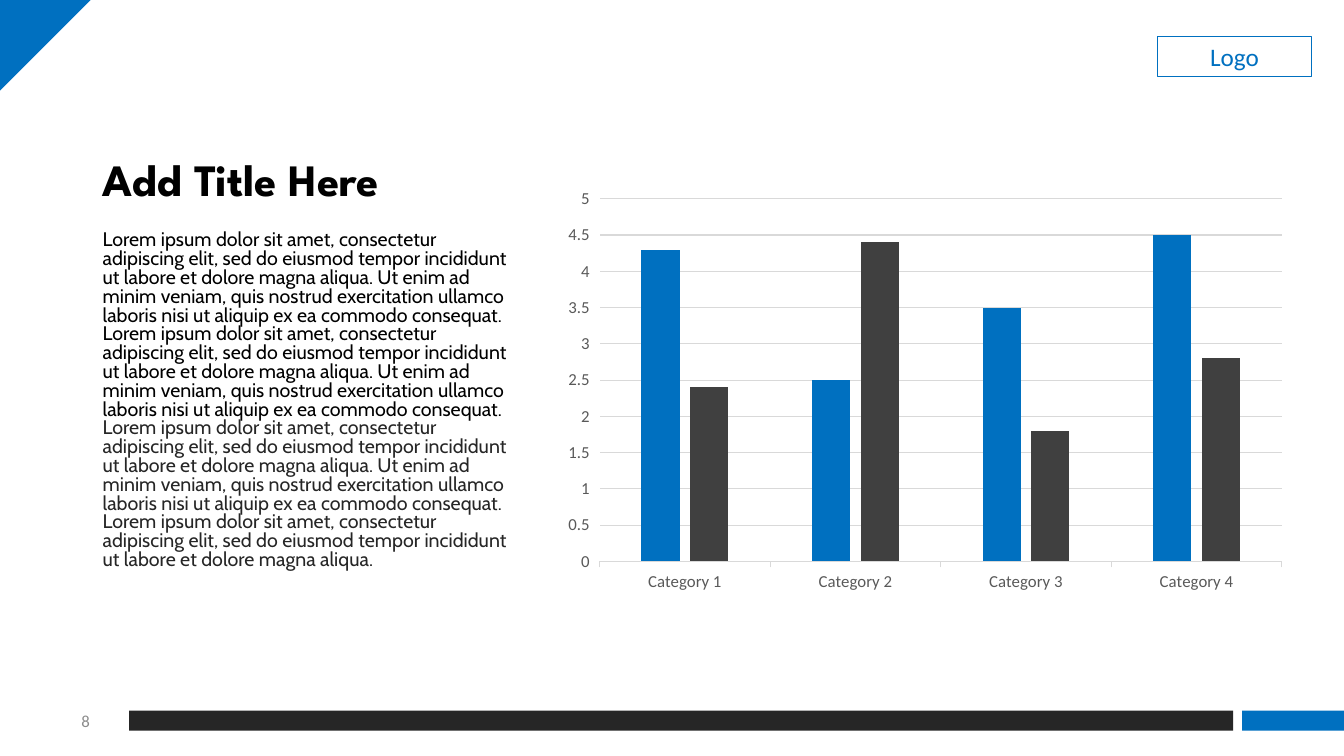
import pptx
import pptx.chart.data
import pptx.dml.color
import pptx.enum.chart
import pptx.enum.shapes
import pptx.enum.text
import pptx.util

Inches = pptx.util.Inches
Pt = pptx.util.Pt
MSO_SHAPE = pptx.enum.shapes.MSO_SHAPE
ALIGN = pptx.enum.text.PP_ALIGN
ANCHOR = pptx.enum.text.MSO_ANCHOR
TICK = pptx.enum.chart.XL_TICK_MARK

BLUE, CHARCOAL, GREY, GRID = "0070C0", "262626", "595959", "D9D9D9"
OPENING = (
    "Lorem ipsum dolor sit amet, consectetur adipiscing elit, "
    "sed do eiusmod tempor incididunt ut labore et dolore magna aliqua."
)
PASSAGE = (
    OPENING + " Ut enim ad minim veniam, quis nostrud exercitation ullamco "
    "laboris nisi ut aliquip ex ea commodo consequat. "
)


def rgb(code):
    """Turn a hex string into a colour."""
    return pptx.dml.color.RGBColor.from_string(code)


def apply(target, values):
    """Set each attribute named in a dict of format values."""
    for name, value in values.items():
        setattr(target, name, value)


def style_font(font, name, size, color, bold=False):
    """Set typeface, size, weight and colour of a font."""
    apply(font, {"name": name, "size": Pt(size), "bold": bold})
    font.color.rgb = rgb(color)


def style_line(line, color):
    """Give a line its colour and the hairline width."""
    line.color.rgb = rgb(color)
    line.width = Pt(0.75)


def add_block(slide, kind, box, fill=None, outline=None):
    """Add a flat preset shape with optional fill and outline."""
    block = slide.shapes.add_shape(kind, *map(Inches, box))
    block.shadow.inherit = False
    if fill:
        block.fill.solid()
        block.fill.fore_color.rgb = rgb(fill)
    else:
        block.fill.background()
    if outline:
        style_line(block.line, outline)
    else:
        block.line.fill.background()
    return block


def write(shape, passages, frame_format, paragraph_format):
    """Fill one paragraph with (text, font values) passages."""
    frame = shape.text_frame
    apply(frame, {"word_wrap": True, **frame_format})
    paragraph = frame.paragraphs[0]
    apply(paragraph, paragraph_format)
    for text, font_values in passages:
        run = paragraph.add_run()
        run.text = text
        style_font(run.font, *font_values)


def add_text(slide, box, passages, frame_format, paragraph_format):
    """Add a wrapping text box with one paragraph."""
    textbox = slide.shapes.add_textbox(*map(Inches, box))
    write(textbox, passages, frame_format, paragraph_format)


def add_frame(slide, width, height):
    """Place the corner, footer bars and page number on the page edges."""
    corner = add_block(slide, MSO_SHAPE.RIGHT_TRIANGLE, (0, 0, 0.9, 0.9), BLUE)
    corner.rotation = 90
    bar_top = height - 0.45
    accent_left = width - 1.01
    add_block(slide, MSO_SHAPE.RECTANGLE,
              (1.28, bar_top, accent_left - 0.09 - 1.28, 0.2), CHARCOAL)
    add_block(slide, MSO_SHAPE.RECTANGLE,
              (accent_left, bar_top, 1.01, 0.2), BLUE)
    add_text(slide, (0.45, bar_top - 0.1, 0.54, 0.4),
             [("8", ("Calibri", 12, "8C8C8C"))],
             {"vertical_anchor": ANCHOR.MIDDLE}, {"alignment": ALIGN.RIGHT})


def add_story(slide, left, top, width):
    """Stack the title above the body text in one column."""
    add_text(slide, (left, top, width, 1.6),
             [("Add Title Here", ("League Spartan", 32, "000000", True))],
             {"vertical_anchor": ANCHOR.BOTTOM}, {"line_spacing": 0.9})
    add_text(slide, (left, top + 1.75, width, 4.17),
             [(PASSAGE * 2, ("Cabin", 14, "000000")),
              (PASSAGE + OPENING, ("Cabin", 14, CHARCOAL))],
             {}, {"line_spacing": 0.8, "space_before": Pt(10)})


def add_category_chart(slide, box):
    """Add the clustered columns for the four categories."""
    scores = pptx.chart.data.CategoryChartData()
    scores.categories = [f"Category {number}" for number in range(1, 5)]
    scores.add_series("Series 1", (4.3, 2.5, 3.5, 4.5))
    scores.add_series("Series 2", (2.4, 4.4, 1.8, 2.8))
    chart = slide.shapes.add_chart(
        pptx.enum.chart.XL_CHART_TYPE.COLUMN_CLUSTERED,
        *map(Inches, box), scores).chart
    apply(chart, {"has_legend": False, "has_title": False})
    style_font(chart.font, "Calibri", 10, "000000")

    columns = chart.plots[0]
    apply(columns, {"gap_width": 219, "overlap": -27,
                    "vary_by_categories": False})
    for series, color in zip(columns.series, (BLUE, "404040")):
        series.format.fill.solid()
        series.format.fill.fore_color.rgb = rgb(color)

    categories, values = chart.category_axis, chart.value_axis
    for axis in (categories, values):
        style_font(axis.tick_labels.font, "Calibri", 12, GREY)
        apply(axis, {"major_tick_mark": TICK.OUTSIDE,
                     "minor_tick_mark": TICK.NONE})
    style_line(categories.format.line, GRID)
    apply(values, {"minimum_scale": 0, "maximum_scale": 5, "major_unit": 0.5,
                   "has_major_gridlines": True})
    values.format.line.fill.background()
    style_line(values.major_gridlines.format.line, GRID)


def add_logo_box(slide, box):
    """Add the outlined box that reserves room for a logo."""
    logo = add_block(slide, MSO_SHAPE.RECTANGLE, box, outline=BLUE)
    write(logo, [("Logo", ("Calibri", 18, BLUE))],
          {"vertical_anchor": ANCHOR.MIDDLE}, {"alignment": ALIGN.CENTER})


def main():
    """Build the slide and save it."""
    width, height = 13.33, 7.5
    deck = pptx.Presentation()
    apply(deck, {"slide_width": Inches(width), "slide_height": Inches(height)})
    slide = deck.slides.add_slide(deck.slide_layouts[6])
    add_frame(slide, width, height)
    add_story(slide, 0.92, 0.5, 4.3)
    add_category_chart(slide, (5.49, 1.79, 7.37, 4.16))
    add_logo_box(slide, (11.48, 0.36, 1.53, 0.4))
    deck.save("out.pptx")


if __name__ == "__main__":
    main()
